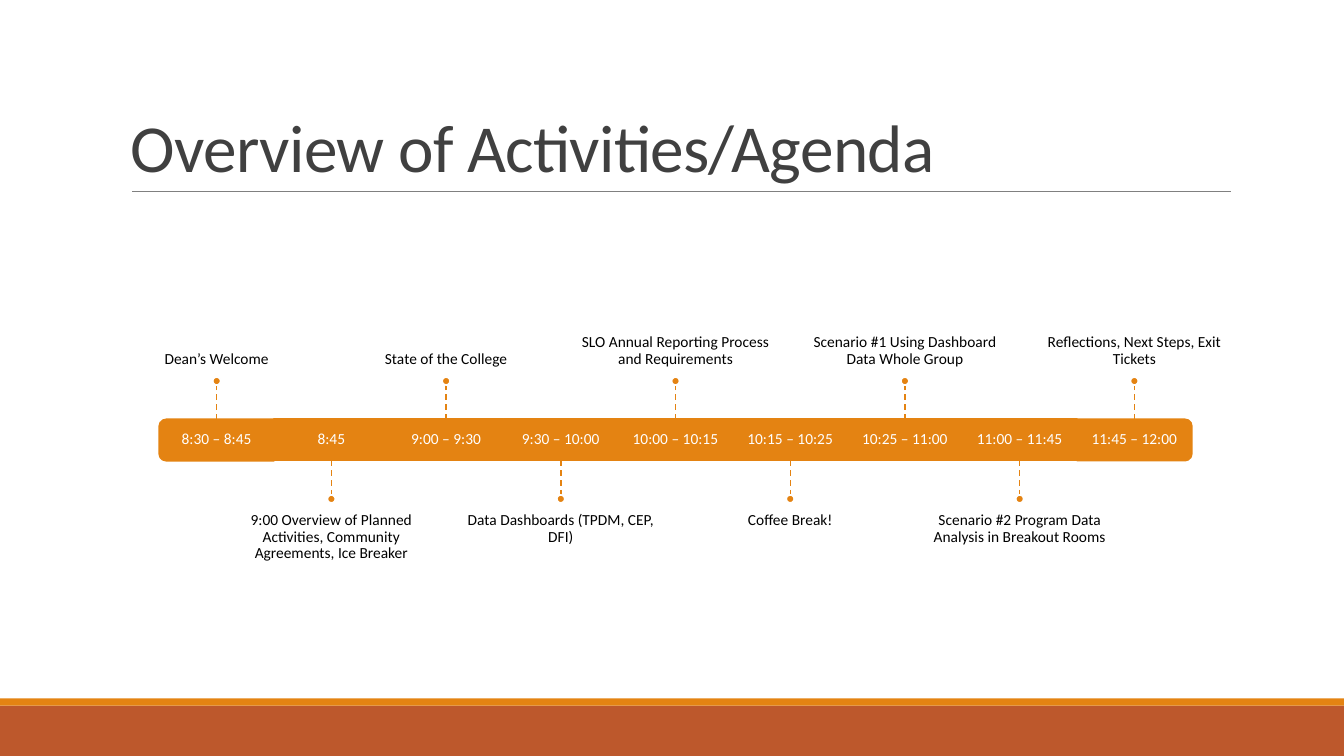
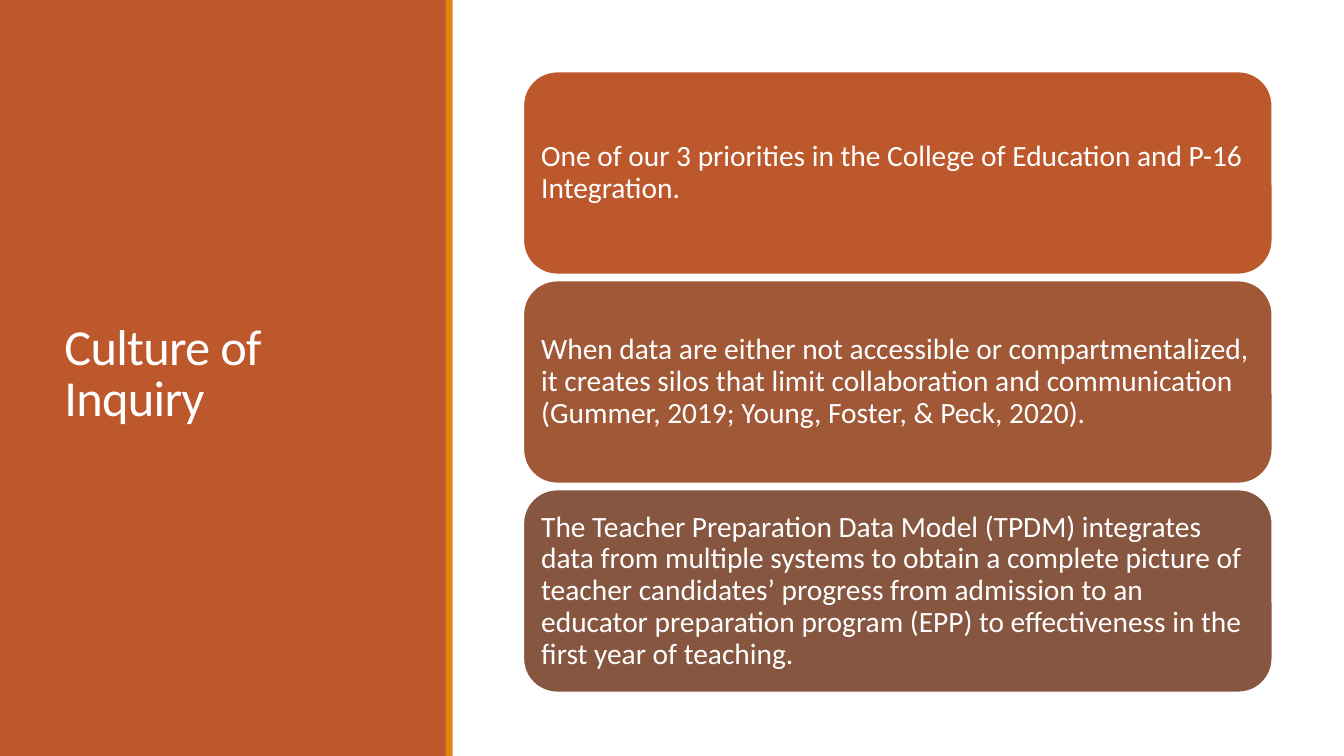
from dataclasses import dataclass

from lxml import etree
from pptx import Presentation
from pptx.dml.color import RGBColor
from pptx.enum.dml import MSO_LINE
from pptx.enum.shapes import MSO_CONNECTOR, MSO_SHAPE
from pptx.enum.text import MSO_ANCHOR, PP_ALIGN
from pptx.oxml.ns import qn
from pptx.util import Inches, Pt

RECT, OVAL = MSO_SHAPE.RECTANGLE, MSO_SHAPE.OVAL
ROUND, CAP = MSO_SHAPE.ROUNDED_RECTANGLE, MSO_SHAPE.ROUND_2_SAME_RECTANGLE
STRAIGHT, DASH = MSO_CONNECTOR.STRAIGHT, MSO_LINE.DASH
TOP, MIDDLE, BOTTOM = MSO_ANCHOR.TOP, MSO_ANCHOR.MIDDLE, MSO_ANCHOR.BOTTOM
LEFT, CENTER = PP_ALIGN.LEFT, PP_ALIGN.CENTER


@dataclass(frozen=True)
class Theme:
    wide: float = 13.33
    high: float = 7.5
    font: str = "Calibri"
    rust: str = "BD582C"
    amber: str = "E48312"
    brown: str = "A05837"
    umber: str = "865640"
    white: str = "FFFFFF"
    black: str = "000000"
    dark: str = "404040"
    gray: str = "808080"
    title: int = 48
    side: int = 36
    card: int = 21
    label: int = 11
    edge: float = 1.25
    strip: float = 0.07
    pad: float = 0.09


T = Theme()

# Time, topic; topics sit above and below the bar in turn
AGENDA = [
    ("8:30 – 8:45", "Dean’s Welcome"),
    ("8:45", "9:00 Overview of Planned Activities, Community Agreements, Ice Breaker"),
    ("9:00 – 9:30", "State of the College"),
    ("9:30 – 10:00", "Data Dashboards (TPDM, CEP, DFI)"),
    ("10:00 – 10:15", "SLO Annual Reporting Process and Requirements"),
    ("10:15 – 10:25", "Coffee Break!"),
    ("10:25 – 11:00", "Scenario #1 Using Dashboard Data Whole Group"),
    ("11:00 – 11:45", "Scenario #2 Program Data Analysis in Breakout Rooms"),
    ("11:45 – 12:00", "Reflections, Next Steps, Exit Tickets"),
]

CARDS = [
    (T.rust, "One of our 3 priorities in the College of Education and P-16 Integration."),
    (T.brown, "When data are either not accessible or compartmentalized, it creates silos "
              "that limit collaboration and communication (Gummer, 2019; Young, Foster, & "
              "Peck, 2020)."),
    (T.umber, "The Teacher Preparation Data Model (TPDM) integrates data from multiple "
              "systems to obtain a complete picture of teacher candidates’ progress from "
              "admission to an educator preparation program (EPP) to effectiveness in the "
              "first year of teaching."),
]


def rgb(color):
    return RGBColor.from_string(color)


def box(slide, kind, x, y, w, h, fill, edge=None):
    shape = slide.shapes.add_shape(kind, Inches(x), Inches(y), Inches(w), Inches(h))
    shape.shadow.inherit = False
    shape.fill.solid()
    shape.fill.fore_color.rgb = rgb(fill)
    if edge:
        shape.line.color.rgb = rgb(edge)
        shape.line.width = Pt(T.edge)
    else:
        shape.line.fill.background()
    return shape


def rule(slide, x1, y1, x2, y2, color, width, dash=None):
    line = slide.shapes.add_connector(
        STRAIGHT, Inches(x1), Inches(y1), Inches(x2), Inches(y2))
    line.line.color.rgb = rgb(color)
    line.line.width = Pt(width)
    if dash:
        line.line.dash_style = dash
    etree.SubElement(line._element.spPr, qn("a:effectLst"))
    return line


def write(shape, text, size, color, align=LEFT, anchor=MIDDLE,
          pad=(T.pad,) * 4, lead=0.9, track=0):
    """Fill a shape with one paragraph; pad is left, top, right, bottom."""
    frame = shape.text_frame
    frame.word_wrap = True
    frame.vertical_anchor = anchor
    (frame.margin_left, frame.margin_top,
     frame.margin_right, frame.margin_bottom) = map(Inches, pad)
    para = frame.paragraphs[0]
    para.alignment = align
    para.line_spacing = lead
    run = para.add_run()
    run.text = text
    run.font.name = T.font
    run.font.size = Pt(size)
    run.font.color.rgb = rgb(color)
    if track:
        run._r.get_or_add_rPr().set("spc", str(round(track * 100)))


def label(slide, text, x, y, w, h, size, color, **style):
    area = slide.shapes.add_textbox(Inches(x), Inches(y), Inches(w), Inches(h))
    write(area, text, size, color, **style)


def title(slide, text, x, y, w, h, size, color, anchor):
    label(slide, text, x, y, w, h, size, color, anchor=anchor,
          pad=(0.1, 0.05, 0.1, 0.05), lead=0.85, track=-0.5)


def footer(slide):
    band = 0.5
    box(slide, RECT, 0, T.high - band, T.wide, band, T.rust)
    box(slide, RECT, 0, T.high - band - T.strip, T.wide, T.strip, T.amber)


def slot(slide, time, x, y, w, h, turn):
    """Draw one part of the bar; a turn makes it a rounded end."""
    style = dict(size=T.label, color=T.white, align=CENTER)
    if not turn:
        part = box(slide, RECT, x, y, w, h, T.amber, T.amber)
        write(part, time, **style)
        return part
    part = box(slide, CAP, x + (w - h) / 2, y + (h - w) / 2, h, w, T.amber, T.amber)
    part.rotation = turn
    label(slide, time, x, y, w, h, **style)
    return part


def topic(slide, text, part, turn, mid, y, h, step, above):
    """Draw a topic with the dot and dashed stem that tie it to its slot."""
    stem, dot, tall, wide = 0.34, 0.08, 1.45, step * 5 / 3
    side = y if above else y + h
    tip = side - stem if above else side + stem
    line = rule(slide, mid, side, mid, tip, T.amber, 1, DASH)
    if not turn:
        line.begin_connect(part, 0 if above else 2)
    box(slide, OVAL, mid - dot / 2, tip - dot if above else tip, dot, dot,
        T.amber, T.white)
    place = tip - dot - tall if above else tip + dot
    label(slide, text, mid - wide / 2, place, wide, tall, T.label, T.black,
          align=CENTER, anchor=BOTTOM if above else TOP,
          pad=(0, 0, 0, T.pad) if above else (0, T.pad, 0, 0))


def agenda(slide):
    footer(slide)
    rule(slide, 1.31, 1.9, 12.21, 1.9, T.gray, 0.5)
    title(slide, "Overview of Activities/Agenda", 1.2, 0.31, 11, 1.59,
          T.title, T.dark, BOTTOM)
    left, right, y, h = 1.58, 11.82, 4.16, 0.41
    step = (right - left) / len(AGENDA)
    turns = {0: 270, len(AGENDA) - 1: 90}
    for i, (time, text) in enumerate(AGENDA):
        x, turn = left + i * step, turns.get(i)
        part = slot(slide, time, x, y, step, h, turn)
        topic(slide, text, part, turn, x + step / 2, y, h, step, i % 2 == 0)


def culture(slide):
    panel = 4.43
    box(slide, RECT, 0, 0, panel, T.high, T.rust)
    title(slide, "Culture of Inquiry", 0.54, 0.57, 3.37, 6.31,
          T.side, T.white, MIDDLE)
    box(slide, RECT, panel - 0.01, 0, T.strip, T.high, T.amber)
    top, end, gap = 0.71, 6.87, 0.06
    tall = (end - top + gap) / len(CARDS) - gap
    for i, (fill, text) in enumerate(CARDS):
        card = box(slide, ROUND, 5.19, top + i * (tall + gap), 7.43, tall,
                   fill, T.white)
        write(card, text, T.card, T.white, pad=(0.08, T.pad, 0.08, T.pad))


def main():
    deck = Presentation()
    deck.slide_width, deck.slide_height = Inches(T.wide), Inches(T.high)
    blank = deck.slide_layouts[6]
    for draw in (agenda, culture):
        draw(deck.slides.add_slide(blank))
    deck.save("out.pptx")


if __name__ == "__main__":
    main()
